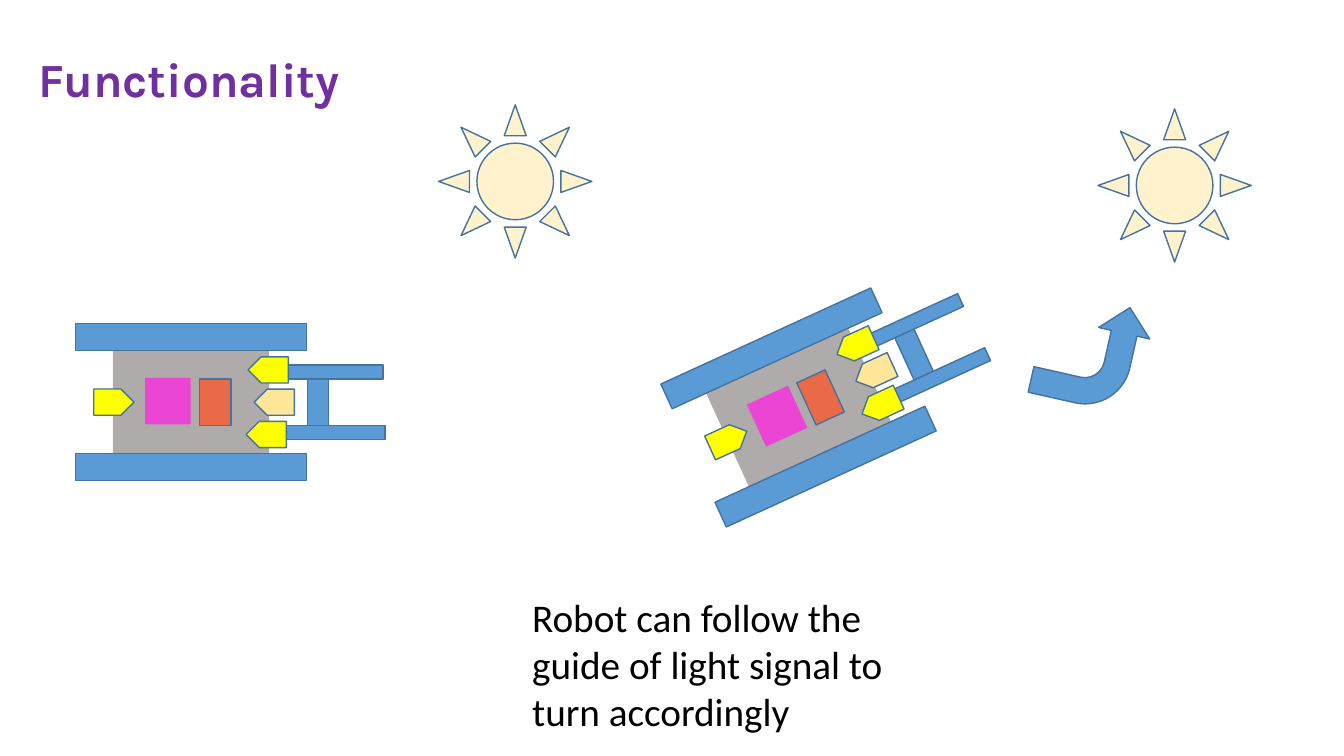
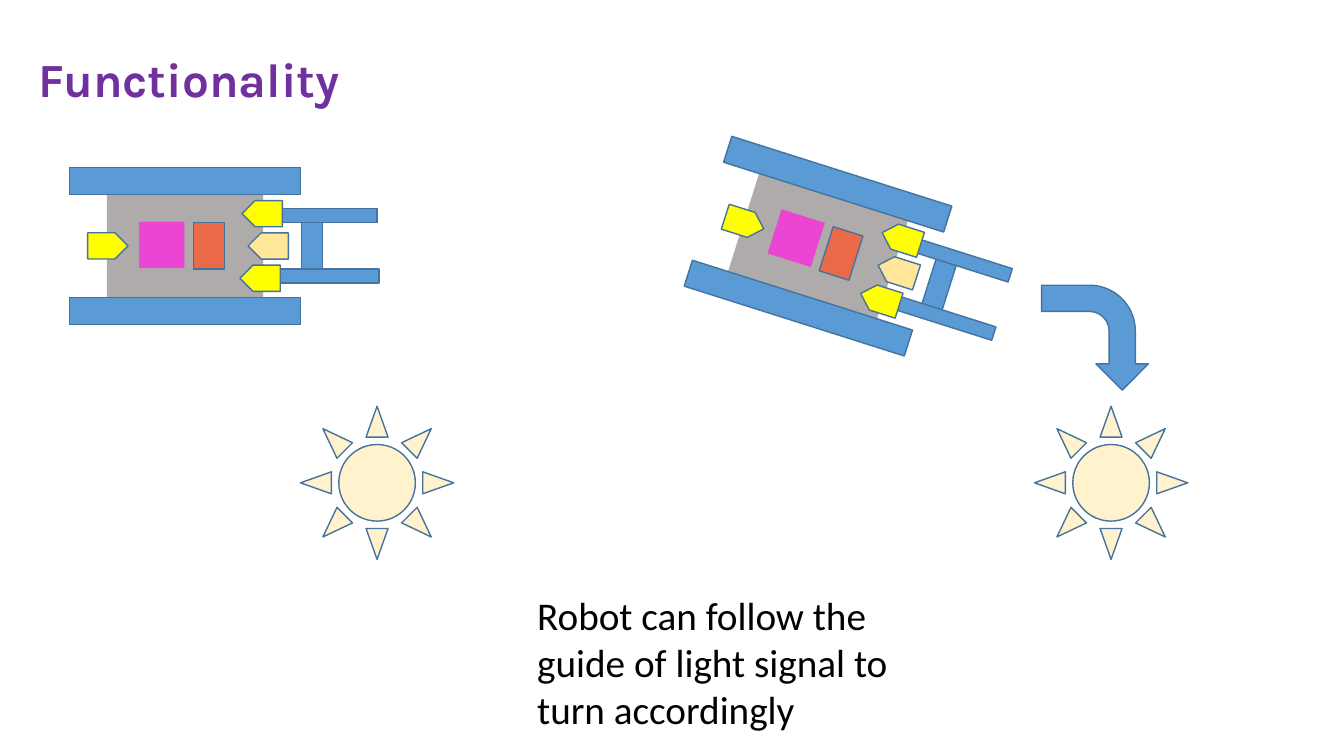
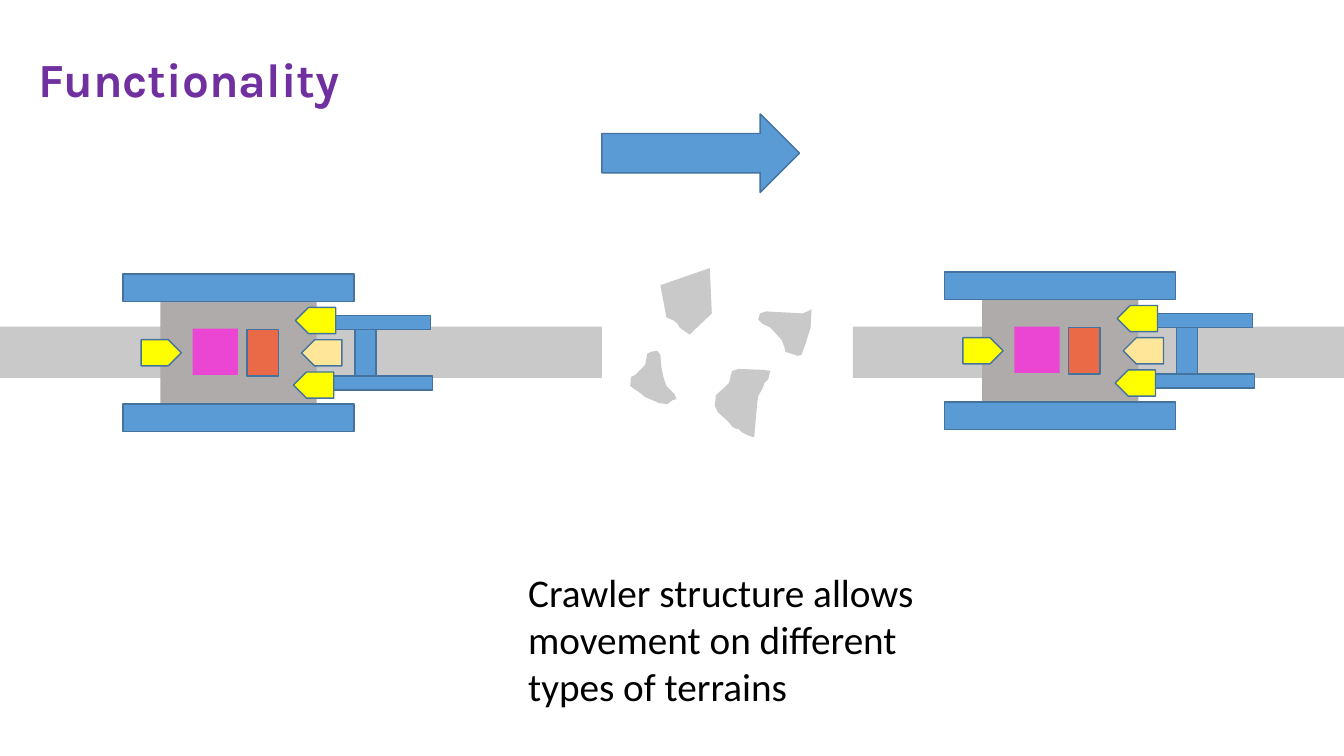
from dataclasses import dataclass
from typing import Optional

from pptx import Presentation
from pptx.dml.color import RGBColor
from pptx.enum.shapes import MSO_SHAPE as Shp
from pptx.enum.text import MSO_AUTO_SIZE as Fit, PP_ALIGN as Align
from pptx.util import Inches, Pt


@dataclass(frozen=True)
class Theme:
    blue: str = "5B9BD5"
    outline: str = "43739E"
    chassis: str = "AFABAB"
    yellow: str = "FFFF00"
    amber: str = "FFE699"
    magenta: str = "EA46D3"
    orange: str = "EA6946"
    sun: str = "FFF2CC"
    ground: str = "C9C9C9"
    title: str = "7030A0"
    body: str = "000000"
    title_font: str = "Karla"
    body_font: str = "Calibri"
    title_size: float = 34
    body_size: float = 28
    line_width: float = 1


TH = Theme()


@dataclass(frozen=True)
class Piece:
    """A filled preset shape; lengths in inches."""
    x: float
    y: float
    w: float
    h: float
    fill: str
    kind: Shp = Shp.RECTANGLE
    rot: float = 0
    line: Optional[str] = TH.outline
    flip: bool = False


@dataclass(frozen=True)
class Robot:
    """Top-left corner of the unturned robot, and its turn in degrees."""
    x: float
    y: float
    turn: float = 0


def track(y: float) -> Piece:
    return Piece(0, y, 2.29, 0.27, TH.blue)


def prong(x: float, y: float) -> Piece:
    return Piece(x, y, 1.22, 0.14, TH.blue)


def sensor(x: float, y: float, fill: str = TH.yellow, rot: float = 180) -> Piece:
    return Piece(x, y, 0.4, 0.26, fill, Shp.PENTAGON, rot)


def sun(x: float, y: float) -> Piece:
    return Piece(x, y, 1.52, 1.52, TH.sun, Shp.SUN)


def road(x: float, w: float) -> Piece:
    return Piece(x, 3.24, w, 0.51, TH.ground, line=None)


# Robot seen from above, relative to its top-left corner, back to front
ROBOT_PIECES = (
    Piece(2.3, 0.53, 0.21, 0.49, TH.blue),
    Piece(0.37, 0.27, 1.55, 1.02, TH.chassis, line=None),
    track(0), track(1.29),
    sensor(0.18, 0.65, rot=0),
    prong(1.83, 0.41), sensor(1.71, 0.33),
    prong(1.85, 1.01), sensor(1.77, 0.65, TH.amber), sensor(1.69, 0.97),
    Piece(0.69, 0.54, 0.45, 0.46, TH.magenta, line=None),
    Piece(1.23, 0.55, 0.31, 0.46, TH.orange),
)

# Outlines of the loose rocks
ROCKS = (
    ((6.61, 3.15), (6.55, 2.83), (7.04, 2.66), (7.06, 3.11), (6.84, 3.32),
     (6.74, 3.25), (6.72, 3.21), (6.68, 3.18)),
    ((7.22, 4.18), (7.12, 4.09), (7.09, 4.03), (7.1, 3.92), (7.19, 3.84),
     (7.23, 3.8), (7.26, 3.68), (7.33, 3.66), (7.57, 3.67), (7.64, 3.68),
     (7.62, 3.76), (7.58, 3.8), (7.57, 3.84), (7.52, 3.93), (7.51, 4),
     (7.49, 4.23), (7.48, 4.34), (7.42, 4.32), (7.36, 4.29), (7.33, 4.26),
     (7.29, 4.25), (7.26, 4.23)),
    ((7.75, 3.37), (7.64, 3.25), (7.56, 3.21), (7.52, 3.17), (7.54, 3.11),
     (7.6, 3.09), (7.96, 3.11), (8.01, 3.09), (8.05, 3.07), (8.04, 3.25),
     (7.99, 3.41), (7.95, 3.52), (7.91, 3.53), (7.79, 3.49), (7.78, 3.44)),
    ((6.54, 4), (6.4, 3.94), (6.35, 3.9), (6.25, 3.83), (6.26, 3.74),
     (6.3, 3.72), (6.4, 3.62), (6.42, 3.51), (6.46, 3.49), (6.52, 3.48),
     (6.55, 3.52), (6.56, 3.64), (6.58, 3.74), (6.61, 3.83), (6.69, 3.91),
     (6.71, 3.96), (6.67, 3.97), (6.62, 4.01)),
)


def paint(sp, fill: str, line: Optional[str]) -> None:
    sp.shadow.inherit = False
    sp.fill.solid()
    sp.fill.fore_color.rgb = RGBColor.from_string(fill)
    if line:
        sp.line.color.rgb = RGBColor.from_string(line)
        sp.line.width = Pt(TH.line_width)
    else:
        sp.line.fill.background()


def draw_piece(shapes, piece: Piece, dx: float = 0, dy: float = 0) -> None:
    sp = shapes.add_shape(piece.kind, Inches(piece.x + dx), Inches(piece.y + dy),
                          Inches(piece.w), Inches(piece.h))
    sp.rotation = piece.rot
    if piece.flip:
        sp._element.spPr.xfrm.set("flipH", "1")
    paint(sp, piece.fill, piece.line)


def draw_robot(shapes, robot: Robot) -> None:
    group = shapes.add_group_shape()
    for piece in ROBOT_PIECES:
        draw_piece(group.shapes, piece, robot.x, robot.y)
    group.rotation = robot.turn


def draw_rock(shapes, points: tuple) -> None:
    start, *rest = [(Inches(x), Inches(y)) for x, y in points]
    builder = shapes.build_freeform(*start)
    builder.add_line_segments(rest, close=True)
    paint(builder.convert_to_shape(), TH.ground, None)


def draw_text(shapes, text: str, x: float, y: float, w: float, h: float,
              font: str, size: float, color: str, title: bool = False) -> None:
    tf = shapes.add_textbox(Inches(x), Inches(y), Inches(w), Inches(h)).text_frame
    tf.word_wrap = not title
    tf.auto_size = Fit.SHAPE_TO_FIT_TEXT
    tf.text = text
    p = tf.paragraphs[0]
    p.alignment = Align.CENTER if title else Align.LEFT
    r = p.runs[0]
    r.font.name = font
    r.font.size = Pt(size)
    r.font.bold = title
    r.font.color.rgb = RGBColor.from_string(color)


@dataclass(frozen=True)
class Scene:
    caption: str
    caption_at: tuple[float, float, float]  # left, top, width
    robots: tuple[Robot, ...]
    signs: tuple[Piece, ...]  # suns and arrows
    roads: tuple[Piece, ...] = ()
    rocks: tuple = ()


FOLLOW = "Robot can follow the guide of light signal to turn accordingly"

SCENES = (
    # Light on the left of the robot
    Scene(FOLLOW, (5.18, 5.84, 3.83),
          (Robot(6.74, 3.1, 335.4), Robot(0.75, 3.21)),
          (sun(4.35, 1.04), sun(10.89, 1.08),
           Piece(10.31, 2.97, 1.04, 1.06, TH.blue, Shp.BENT_ARROW, 102.7, flip=True))),
    # Light on the right of the robot
    Scene(FOLLOW, (5.23, 5.82, 3.83),
          (Robot(6.95, 1.78, 17.6), Robot(0.69, 1.66)),
          (sun(2.98, 4.03), sun(10.26, 4.03),
           Piece(10.34, 2.82, 1.04, 1.06, TH.blue, Shp.BENT_ARROW, 90))),
    # Broken road
    Scene("Crawler structure allows movement on different types of terrains",
          (5.14, 5.59, 4.22),
          (Robot(1.22, 2.72), Robot(9.37, 2.7)),
          (Piece(5.97, 1.13, 1.96, 0.78, TH.blue, Shp.RIGHT_ARROW),),
          (road(0, 5.97), road(8.46, 4.87)), ROCKS),
)


def draw_scene(prs, scene: Scene) -> None:
    shapes = prs.slides.add_slide(prs.slide_layouts[6]).shapes
    for piece in scene.roads:
        draw_piece(shapes, piece)
    for robot in scene.robots:
        draw_robot(shapes, robot)
    for rock in scene.rocks:
        draw_rock(shapes, rock)
    for piece in scene.signs:
        draw_piece(shapes, piece)
    draw_text(shapes, "Functionality", 0.24, 0.45, 3.27, 0.67,
              TH.title_font, TH.title_size, TH.title, title=True)
    x, y, w = scene.caption_at
    draw_text(shapes, scene.caption, x, y, w, 1.51,
              TH.body_font, TH.body_size, TH.body)


def main() -> None:
    prs = Presentation()
    prs.slide_width, prs.slide_height = Inches(13.33), Inches(7.5)
    for scene in SCENES:
        draw_scene(prs, scene)
    prs.save("out.pptx")


if __name__ == "__main__":
    main()
